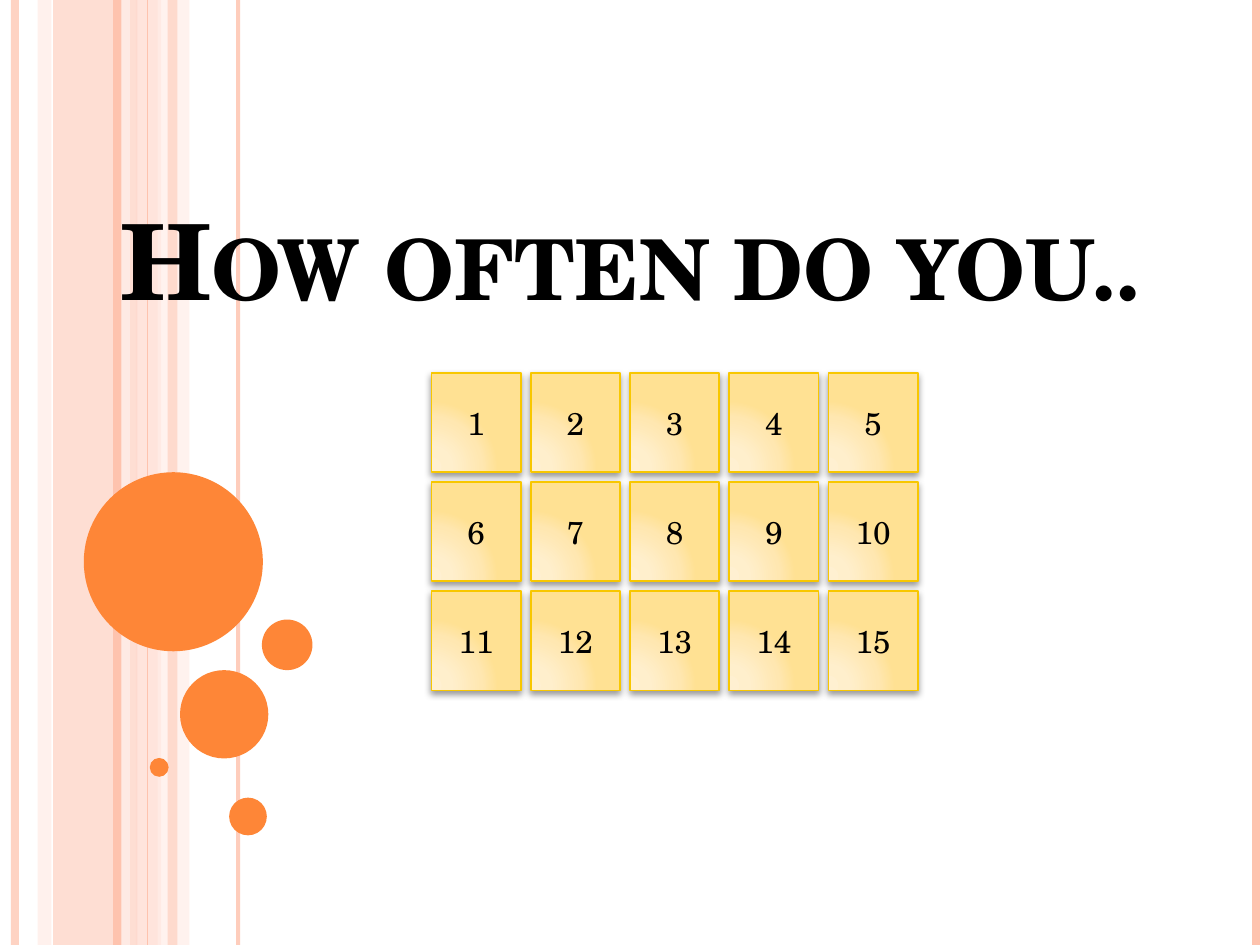
from dataclasses import dataclass

from pptx import Presentation
from pptx.dml.color import RGBColor
from pptx.enum.shapes import MSO_CONNECTOR, MSO_SHAPE
from pptx.enum.text import MSO_ANCHOR, PP_ALIGN
from pptx.oxml import parse_xml
from pptx.oxml.ns import nsdecls, qn
from pptx.oxml.xmlchemy import OxmlElement
from pptx.util import Cm, Pt

RECTANGLE, OVAL = MSO_SHAPE.RECTANGLE, MSO_SHAPE.OVAL
BUTTON = MSO_SHAPE.ACTION_BUTTON_CUSTOM
STRAIGHT = MSO_CONNECTOR.STRAIGHT
CENTER = PP_ALIGN.CENTER
MIDDLE, BOTTOM = MSO_ANCHOR.MIDDLE, MSO_ANCHOR.BOTTOM


@dataclass(frozen=True)
class Theme:
    font: str = "TeX Gyre Schola"
    title_size: int = 60
    button_size: int = 18
    text: str = "000000"
    peach: str = "FEC3AE"
    light_peach: str = "FFD9CE"
    pale_peach: str = "FFEDE8"
    orange: str = "FE8637"
    button_line: str = "F8C700"
    button_stops: tuple = ((0, "FFF0D1"), (30, "FFEFCC"), (75, "FFE7B1"), (100, "FFE193"))


@dataclass(frozen=True)
class Band:
    left: float
    width: float
    color: str
    opacity: int


@dataclass(frozen=True)
class Stripe:
    x: float
    weight: float
    color: str
    opacity: int = 100


@dataclass(frozen=True)
class Bubble:
    left: float
    top: float
    diameter: float


THEME = Theme()
PAGE_WIDTH, PAGE_HEIGHT = 25.4, 19.05

BANDS = (
    Band(1.07, 1.7, THEME.peach, 54),
    Band(0.76, 0.28, THEME.light_peach, 36),
    Band(2.74, 0.51, THEME.light_peach, 70),
    Band(3.18, 0.64, THEME.pale_peach, 71),
    Band(3.38, 0.2, THEME.peach, 51),
)
STRIPES = (
    Stripe(0.3, 4.5, THEME.peach, 73),
    Stripe(2.54, 4.5, THEME.pale_peach, 83),
    Stripe(2.36, 4.5, THEME.peach),
    Stripe(4.8, 2.25, THEME.peach, 82),
    Stripe(2.97, 0.75, THEME.peach),
    Stripe(25.32, 4.5, THEME.peach),
)
BUBBLES = (
    Bubble(1.69, 9.52, 3.61),
    Bubble(3.63, 13.51, 1.78),
    Bubble(3.02, 15.28, 0.38),
    Bubble(4.62, 16.08, 0.76),
    Bubble(5.28, 12.49, 1.02),
)

# Button grid: position, size and pitch in centimetres
COLUMNS, ROWS = 5, 3
GRID_LEFT, GRID_TOP = 8.7, 7.52
BUTTON_WIDTH, BUTTON_HEIGHT = 1.8, 2.0
COLUMN_PITCH, ROW_PITCH = 2.0, 2.2


def set_opacity(shape, opacity: int) -> None:
    if opacity < 100:
        for color in shape._element.spPr.iter(qn("a:srgbClr")):
            alpha = OxmlElement("a:alpha")
            alpha.set("val", str(opacity * 1000))
            color.append(alpha)


def add_plain_shape(page, kind, left: float, top: float, width: float,
                    height: float, color: str):
    shape = page.shapes.add_shape(kind, Cm(left), Cm(top), Cm(width), Cm(height))
    shape.fill.solid()
    shape.fill.fore_color.rgb = RGBColor.from_string(color)
    shape.line.fill.background()
    shape.shadow.inherit = False
    return shape


def add_band(page, band: Band) -> None:
    shape = add_plain_shape(page, RECTANGLE, band.left, 0, band.width, PAGE_HEIGHT, band.color)
    set_opacity(shape, band.opacity)


def add_stripe(page, stripe: Stripe) -> None:
    line = page.shapes.add_connector(STRAIGHT, Cm(stripe.x), 0, Cm(stripe.x), Cm(PAGE_HEIGHT))
    line.line.width = Pt(stripe.weight)
    line.line.color.rgb = RGBColor.from_string(stripe.color)
    set_opacity(line, stripe.opacity)
    line._element.spPr.append(OxmlElement("a:effectLst"))


def write_text(box, text: str, anchor, formats: dict):
    frame = box.text_frame
    frame.word_wrap = True
    frame.vertical_anchor = anchor
    para = frame.paragraphs[0]
    para.alignment = CENTER
    span = para.add_run()
    span.text = text
    for name, value in formats.items():
        setattr(span.font, name, value)
    span.font.color.rgb = RGBColor.from_string(THEME.text)
    return span


def add_title(page, text: str) -> None:
    box = page.shapes.add_textbox(Cm(1.9), Cm(2.51), Cm(21.6), Cm(4.09))
    formats = {"name": THEME.font, "size": Pt(THEME.title_size), "bold": True}
    span = write_text(box, text, BOTTOM, formats)
    span._r.get_or_add_rPr().set("cap", "small")


def add_button(page, number: int) -> None:
    row, column = divmod(number - 1, COLUMNS)
    button = page.shapes.add_shape(
        BUTTON, Cm(GRID_LEFT + column * COLUMN_PITCH), Cm(GRID_TOP + row * ROW_PITCH),
        Cm(BUTTON_WIDTH), Cm(BUTTON_HEIGHT))
    # Circular gradient
    stops = "".join(f'<a:gs pos="{position * 1000}"><a:srgbClr val="{color}"/></a:gs>'
                    for position, color in THEME.button_stops)
    properties = button._element.spPr
    properties.append(parse_xml(
        f'<a:gradFill {nsdecls("a")} rotWithShape="1"><a:gsLst>{stops}</a:gsLst>'
        '<a:path path="circle"><a:fillToRect l="5000" t="100000" r="120000" b="10000"/>'
        '</a:path></a:gradFill>'))
    button.line.width = Pt(1)
    button.line.color.rgb = RGBColor.from_string(THEME.button_line)
    # Soft shadow straight below
    button.shadow.inherit = False
    properties.find(qn("a:effectLst")).append(parse_xml(
        f'<a:outerShdw {nsdecls("a")} blurRad="{Pt(4)}" dist="{Pt(2)}" dir="5400000" '
        f'rotWithShape="0"><a:srgbClr val="{THEME.text}"><a:alpha val="40000"/>'
        '</a:srgbClr></a:outerShdw>'))
    formats = {"name": THEME.font, "size": Pt(THEME.button_size)}
    write_text(button, str(number), MIDDLE, formats)


def main() -> None:
    deck = Presentation()
    deck.slide_width, deck.slide_height = Cm(PAGE_WIDTH), Cm(PAGE_HEIGHT)
    page = deck.slides.add_slide(deck.slide_layouts[6])

    # Striped background and bubbles
    for band in BANDS:
        add_band(page, band)
    for stripe in STRIPES:
        add_stripe(page, stripe)
    for bubble in BUBBLES:
        add_plain_shape(page, OVAL, bubble.left, bubble.top,
                        bubble.diameter, bubble.diameter, THEME.orange)

    # Title and numbered buttons
    add_title(page, "How often do you..")
    for number in range(1, COLUMNS * ROWS + 1):
        add_button(page, number)

    deck.save("out.pptx")


if __name__ == "__main__":
    main()
